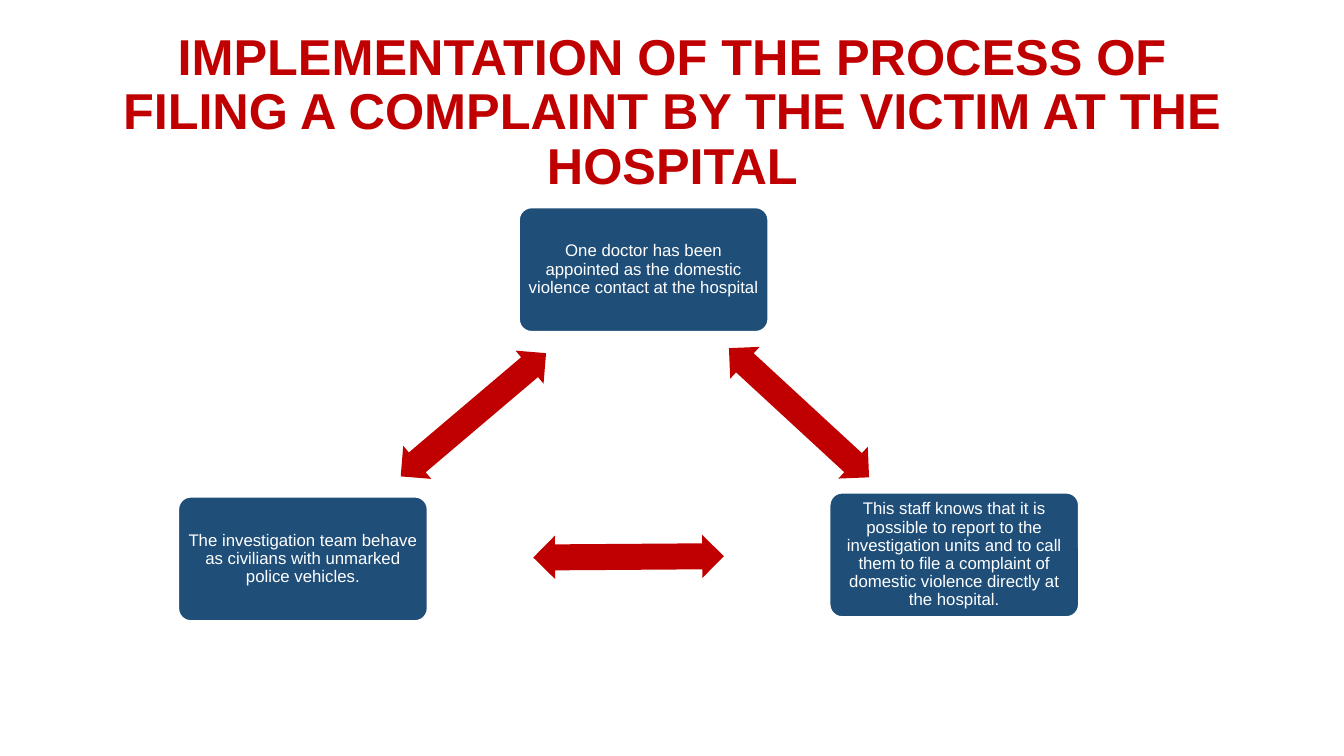
from pptx import Presentation
from pptx.dml.color import RGBColor
from pptx.enum.shapes import MSO_SHAPE
from pptx.enum.text import MSO_ANCHOR, MSO_AUTO_SIZE, PP_ALIGN
from pptx.util import Inches, Pt

ROUNDED = MSO_SHAPE.ROUNDED_RECTANGLE
DOUBLE_ARROW = MSO_SHAPE.LEFT_RIGHT_ARROW
MIDDLE = MSO_ANCHOR.MIDDLE
NO_FIT = MSO_AUTO_SIZE.NONE
CENTER = PP_ALIGN.CENTER

RED = RGBColor(0xC0, 0x00, 0x00)
NAVY = RGBColor(0x1F, 0x4E, 0x79)
WHITE = RGBColor(0xFF, 0xFF, 0xFF)

# Sizes and positions in percent of the slide's width and height
BOX_SIZE = (18.52, 16.4)
ARROW_SIZE = (14.18, 5.73)


class Deck:
    """Holds the style and the current slide."""

    font = "Arial"

    def __init__(self, prs):
        self.prs = prs
        self.s = prs.slides.add_slide(prs.slide_layouts[5])

    def area(self, left, top, width, height):
        w, h = self.prs.slide_width, self.prs.slide_height
        return [int(share * side / 100) for share, side in
                ((left, w), (top, h), (width, w), (height, h))]

    def set_text(self, sp, text, size, color, bold=False):
        tf = sp.text_frame
        tf.text = text
        tf.word_wrap = True
        tf.auto_size = NO_FIT
        tf.vertical_anchor = MIDDLE
        p = tf.paragraphs[0]
        p.alignment = CENTER
        p.line_spacing = 0.9
        font = p.runs[0].font
        font.name, font.size, font.bold = self.font, Pt(size), bold
        font.color.rgb = color
        return tf

    def title(self, text, *place):
        sp = self.s.shapes.title
        sp.left, sp.top, sp.width, sp.height = self.area(*place)
        self.set_text(sp, text, 36, RED, bold=True)

    def shape(self, kind, place, fill):
        sp = self.s.shapes.add_shape(kind, *self.area(*place))
        sp.shadow.inherit = False
        sp.fill.solid()
        sp.fill.fore_color.rgb = fill
        return sp

    def box(self, text, left, top):
        sp = self.shape(ROUNDED, (left, top, *BOX_SIZE), NAVY)
        sp.adjustments[0] = 0.1
        sp.line.color.rgb = WHITE
        sp.line.width = Pt(1)
        tf = self.set_text(sp, text, 12, WHITE)
        tf.margin_left = tf.margin_right = Inches(0.05)
        tf.margin_top = tf.margin_bottom = Inches(0.05)

    def arrow(self, left, top, rotation):
        sp = self.shape(DOUBLE_ARROW, (left, top, *ARROW_SIZE), RED)
        sp.adjustments[0] = 0.6
        sp.adjustments[1] = 0.5
        sp.line.fill.background()
        sp.rotation = rotation


def main():
    prs = Presentation()
    prs.slide_width, prs.slide_height = Inches(13.33), Inches(7.5)
    deck = Deck(prs)

    # Title
    deck.title("IMPLEMENTATION OF THE PROCESS OF FILING A COMPLAINT "
               "BY THE VICTIM AT THE HOSPITAL", 6.9, 5.33, 86.27, 19.33)

    # Three parties at the corners of the triangle
    for text, left, top in (
        ("One doctor has been appointed as the domestic violence contact "
         "at the hospital", 38.63, 27.47),
        ("The investigation team behave as civilians with unmarked police "
         "vehicles.", 13.28, 65.73),
        ("This staff knows that it is possible to report to the "
         "investigation units and to call them to file a complaint of "
         "domestic violence directly at the hospital.", 61.74, 65.2),
    ):
        deck.box(text, left, top)

    # Two-way arrows along its sides
    for left, top, rotation in (
        (28.13, 52, 139.7),
        (39.68, 70.8, 359.6),
        (52.36, 51.73, 222.7),
    ):
        deck.arrow(left, top, rotation)

    prs.save("out.pptx")


if __name__ == "__main__":
    main()
